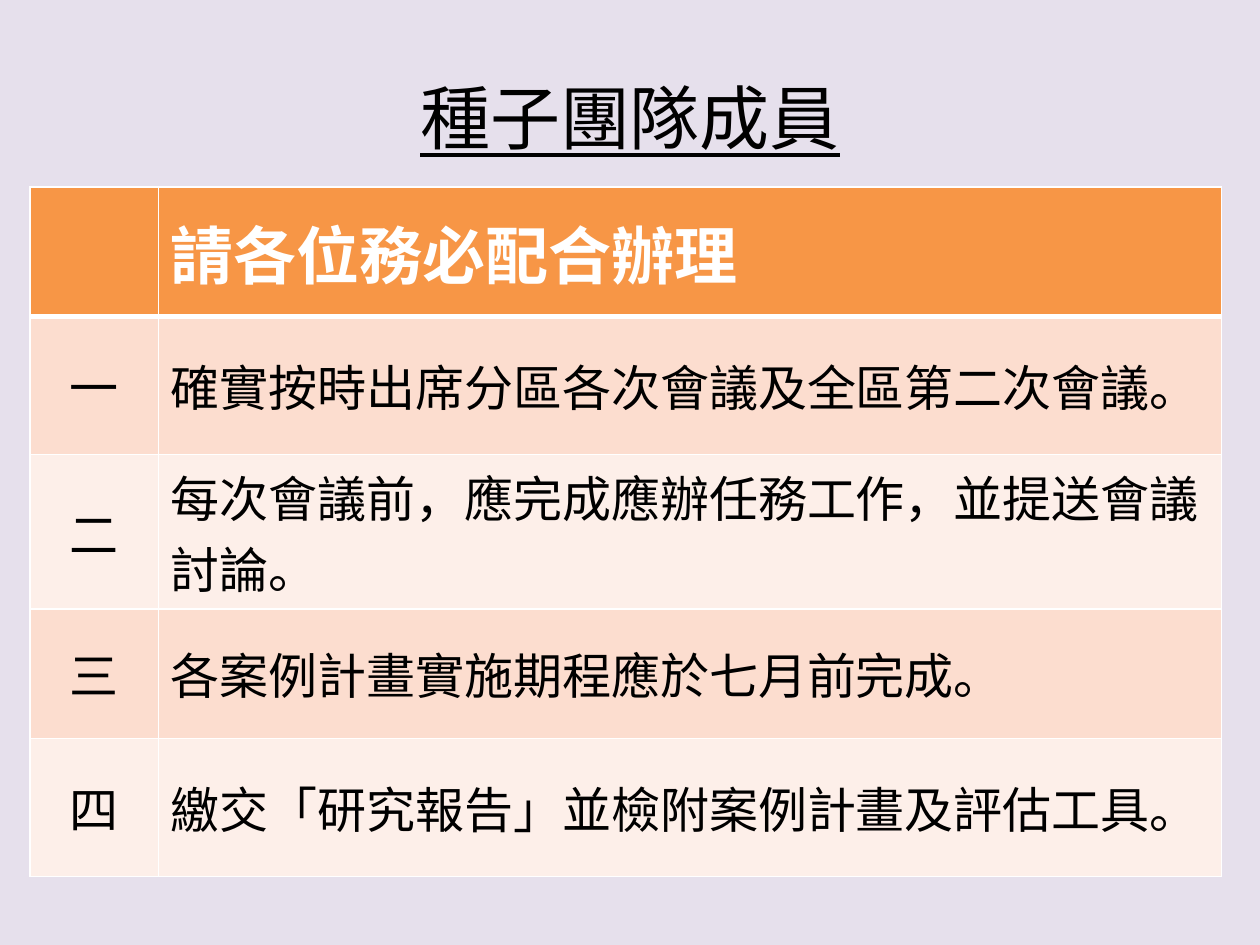
from lxml.etree import SubElement
from pptx import Presentation
from pptx.dml.color import RGBColor
from pptx.enum.text import MSO_ANCHOR as ANCHOR, PP_ALIGN as ALIGN
from pptx.oxml import parse_xml
from pptx.oxml.ns import nsdecls, qn
from pptx.util import Pt

FONT = "Noto Sans CJK SC"
HEADER_FILL = "F79646"
BAND_FILLS = ["FCDDCF", "FDEFE9"]
ROWS = [
    ("", "請各位務必配合辦理"),
    ("一", "確實按時出席分區各次會議及全區第二次會議。"),
    ("二", "每次會議前，應完成應辦任務工作，並提送會議討論。"),
    ("三", "各案例計畫實施期程應於七月前完成。"),
    ("四", "繳交「研究報告」並檢附案例計畫及評估工具。"),
]
COL_WIDTHS = [73.5, 607.5]
ROW_HEIGHTS = [74, 79, 79, 74, 79]


def rgb(value):
    return RGBColor.from_string(value)


def add_run(p, text, size, color, bold=False):
    r = p.add_run()
    r.text = text
    r.font.size = Pt(size)
    r.font.bold = bold
    r.font.color.rgb = rgb(color)
    r.font.name = FONT
    SubElement(r.font._element, qn("a:ea")).set("typeface", FONT)
    return r


prs = Presentation()
prs.slide_width, prs.slide_height = Pt(720), Pt(540)
s = prs.slides.add_slide(prs.slide_layouts[5])
s.background.fill.solid()
s.background.fill.fore_color.rgb = rgb("E6E0EC")

# Title
title = s.shapes.title
title.left, title.top, title.width, title.height = Pt(36), Pt(21.6), Pt(648), Pt(90)
tf = title.text_frame
tf.vertical_anchor = ANCHOR.MIDDLE
p = tf.paragraphs[0]
p.alignment = ALIGN.CENTER
add_run(p, "種子團隊成員", 40, "000000").font.underline = True

# Table grid
table = s.shapes.add_table(len(ROWS), len(COL_WIDTHS), Pt(17), Pt(106.8),
                           Pt(sum(COL_WIDTHS)), Pt(sum(ROW_HEIGHTS))).table
for col, width in zip(table.columns, COL_WIDTHS):
    col.width = Pt(width)
for row, height in zip(table.rows, ROW_HEIGHTS):
    row.height = Pt(height)

# Cells: header row, then banded rows with a centred number
for i, texts in enumerate(ROWS):
    header = i == 0
    for j, text in enumerate(texts):
        cell = table.cell(i, j)
        cell.vertical_anchor = ANCHOR.MIDDLE
        cell.fill.solid()
        cell.fill.fore_color.rgb = rgb(HEADER_FILL if header else BAND_FILLS[(i - 1) % 2])
        p = cell.text_frame.paragraphs[0]
        p.alignment = ALIGN.CENTER if j == 0 else ALIGN.LEFT
        if text:
            add_run(p, text, 36 if header else 28, "FFFFFF" if header else "000000", header)

        # White borders, thicker on both sides of the header's lower edge
        widths = {"lnL": 1, "lnR": 1, "lnT": 3 if i == 1 else 1, "lnB": 3 if header else 1}
        tc_pr = cell._tc.get_or_add_tcPr()
        for k, (edge, width) in enumerate(widths.items()):
            tc_pr.insert(k, parse_xml(
                f'<a:{edge} {nsdecls("a")} w="{Pt(width)}"><a:solidFill>'
                f'<a:srgbClr val="FFFFFF"/></a:solidFill></a:{edge}>'))

prs.save("out.pptx")
